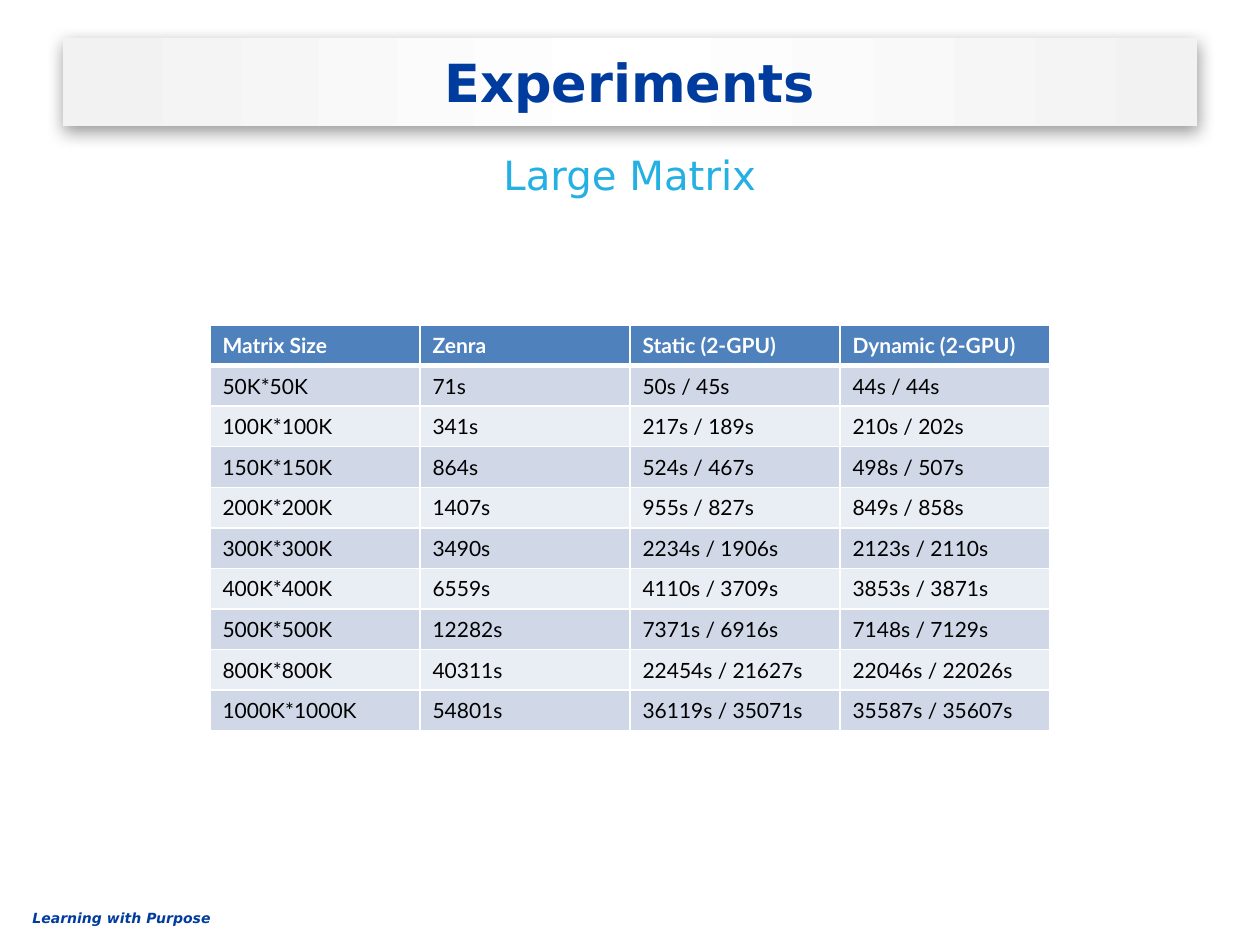
from dataclasses import dataclass

from lxml.etree import SubElement
from pptx import Presentation
from pptx.dml.color import RGBColor as Color
from pptx.enum.text import MSO_ANCHOR as Anchor, MSO_AUTO_SIZE as AutoSize, PP_ALIGN as Align
from pptx.oxml import parse_xml
from pptx.oxml.ns import nsdecls, qn
from pptx.util import Pt

SCALE = 914400 / 126
TITLE_ONLY = 5


@dataclass(frozen=True)
class Theme:
    heading_font: str = "DejaVu Sans"
    table_font: str = "Lato"
    navy: str = "003C9E"
    sky: str = "24B0E3"
    white: str = "FFFFFF"
    black: str = "000000"
    banner_edge: str = "F2F2F2"
    header_fill: str = "4F81BD"
    band_fills: tuple = ("D0D8E8", "E9EDF4")
    title_size: int = 30
    subtitle_size: int = 23
    table_size: int = 12
    footer_size: int = 8
    border: int = 1
    header_border: int = 3


THEME = Theme()

RESULTS = [
    ("Matrix Size", "Zenra", "Static (2-GPU)", "Dynamic (2-GPU)"),
    ("50K*50K", "71s", "50s / 45s", "44s / 44s"),
    ("100K*100K", "341s", "217s / 189s", "210s / 202s"),
    ("150K*150K", "864s", "524s / 467s", "498s / 507s"),
    ("200K*200K", "1407s", "955s / 827s", "849s / 858s"),
    ("300K*300K", "3490s", "2234s / 1906s", "2123s / 2110s"),
    ("400K*400K", "6559s", "4110s / 3709s", "3853s / 3871s"),
    ("500K*500K", "12282s", "7371s / 6916s", "7148s / 7129s"),
    ("800K*800K", "40311s", "22454s / 21627s", "22046s / 22026s"),
    ("1000K*1000K", "54801s", "36119s / 35071s", "35587s / 35607s"),
]


def px(length):
    return round(length * SCALE)


def write(frame, text, font, size, color, bold=False, italic=False, align=Align.LEFT):
    para = frame.paragraphs[0]
    para.text = text
    para.alignment = align
    para.font.name = font
    para.font.size = Pt(size)
    para.font.bold = bold
    para.font.italic = italic
    para.font.color.rgb = Color.from_string(color)


def add_text(page, area, text, **style):
    frame = page.shapes.add_textbox(*map(px, area)).text_frame
    frame.word_wrap = True
    frame.vertical_anchor = Anchor.MIDDLE
    write(frame, text, THEME.heading_font, **style)


def add_banner(page, area, text):
    banner = page.shapes.title
    banner.left, banner.top, banner.width, banner.height = map(px, area)
    stops = "".join(
        f'<a:gs pos="{percent * 1000}"><a:srgbClr val="{color}"/></a:gs>'
        for percent, color in ((2, THEME.banner_edge), (50, THEME.white), (100, THEME.banner_edge))
    )
    gradient = f'<a:gradFill {nsdecls("a")}><a:gsLst>{stops}</a:gsLst><a:lin ang="0" scaled="0"/></a:gradFill>'
    shadow = (
        f'<a:effectLst {nsdecls("a")}><a:outerShdw blurRad="{Pt(10)}" dist="{Pt(3)}" dir="5400000" '
        f'algn="t" rotWithShape="0"><a:srgbClr val="{THEME.black}"><a:alpha val="40000"/>'
        "</a:srgbClr></a:outerShdw></a:effectLst>"
    )
    for part in (gradient, shadow):
        banner.element.spPr.append(parse_xml(part))
    frame = banner.text_frame
    frame.auto_size = AutoSize.NONE
    frame.vertical_anchor = Anchor.MIDDLE
    write(frame, text, THEME.heading_font, THEME.title_size, THEME.navy, bold=True, align=Align.CENTER)


def set_borders(cell, top, bottom):
    properties = cell._tc.get_or_add_tcPr()
    for side, width in (("L", THEME.border), ("R", THEME.border), ("T", top), ("B", bottom)):
        line = SubElement(properties, qn(f"a:ln{side}"), w=str(Pt(width)))
        fill = SubElement(line, qn("a:solidFill"))
        SubElement(fill, qn("a:srgbClr"), val=THEME.white)


def add_results(page, area, rows):
    left, top, width, height = area
    table = page.shapes.add_table(len(rows), len(rows[0]), *map(px, area)).table
    for column in table.columns:
        column.width = px(width / len(rows[0]))
    for index, values in enumerate(rows):
        header = index == 0
        table.rows[index].height = px(height / len(rows))
        fill = THEME.header_fill if header else THEME.band_fills[(index - 1) % 2]
        color = THEME.white if header else THEME.black
        top_width = THEME.header_border if index == 1 else THEME.border
        bottom_width = THEME.header_border if header else THEME.border
        for cell, value in zip(table.rows[index].cells, values):
            set_borders(cell, top_width, bottom_width)
            cell.fill.solid()
            cell.fill.fore_color.rgb = Color.from_string(fill)
            cell.vertical_anchor = Anchor.MIDDLE
            write(cell.text_frame, value, THEME.table_font, THEME.table_size, color, bold=header)


def main():
    deck = Presentation()
    deck.slide_width, deck.slide_height = px(1260), px(945)
    page = deck.slides.add_slide(deck.slide_layouts[TITLE_ONLY])
    add_text(page, (20, 903, 465, 30), "Learning with Purpose",
             size=THEME.footer_size, color=THEME.navy, bold=True, italic=True)
    add_results(page, (210, 325, 840, 406), RESULTS)
    add_banner(page, (63, 38, 1134, 88), "Experiments")
    add_text(page, (63, 138, 1134, 73), "Large Matrix",
             size=THEME.subtitle_size, color=THEME.sky, align=Align.CENTER)
    deck.save("out.pptx")


if __name__ == "__main__":
    main()
